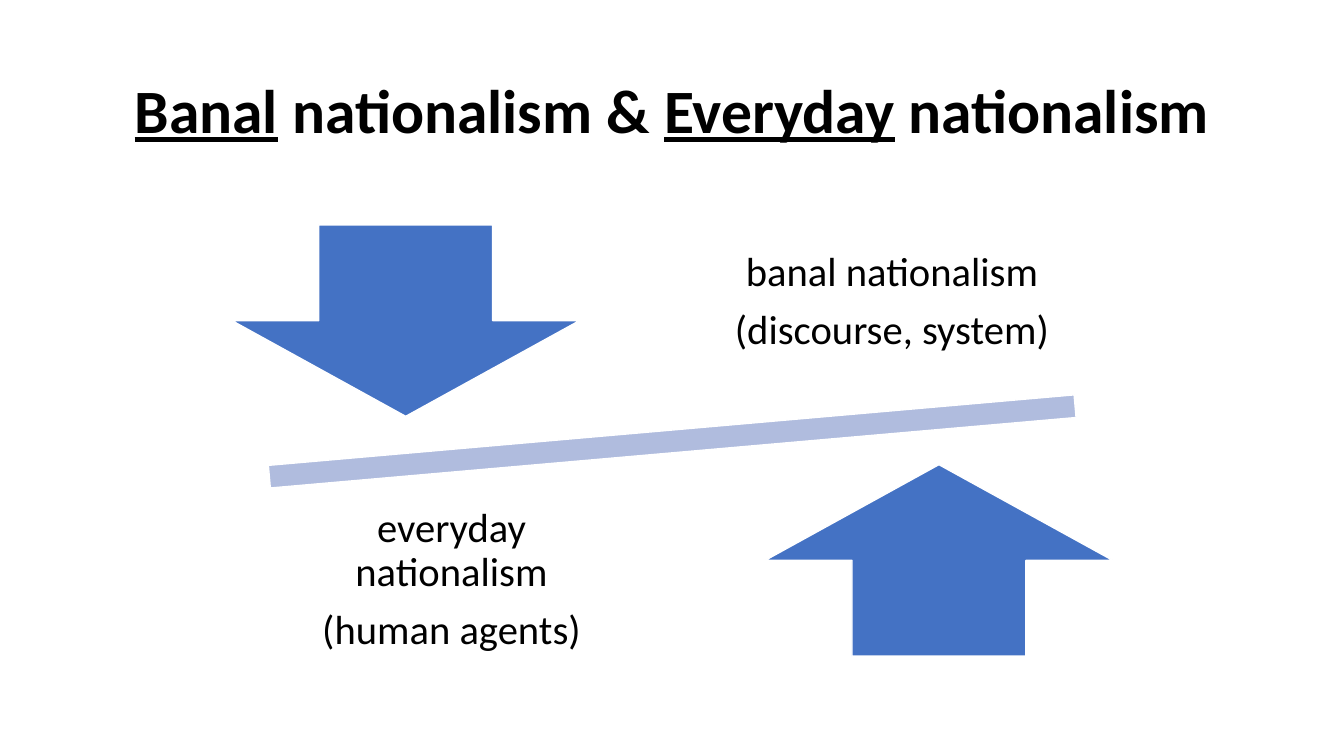
from dataclasses import dataclass

from pptx import Presentation
from pptx.dml.color import RGBColor
from pptx.enum.shapes import MSO_SHAPE
from pptx.enum.text import MSO_ANCHOR, PP_ALIGN
from pptx.util import Pt

COLORS = {"text": "000000", "arrow": "4472C4", "beam": "B0BCDE", "outline": "FFFFFF"}
FONT = "Calibri"
LABEL_SIZE = 29
ARROW_WIDTH, ARROW_HEIGHT = 248.4, 136.8
LABEL_WIDTH, LABEL_HEIGHT = 265, 144


@dataclass
class Figure:
    preset: MSO_SHAPE
    left: float
    top: float
    width: float
    height: float
    color: str
    rotation: float = 0


@dataclass
class Label:
    left: float
    top: float
    lines: list[str]


FIGURES = [
    Figure(MSO_SHAPE.MATH_MINUS, 87.1, 280.8, 786.2, 69.1, "beam", 355),
    Figure(MSO_SHAPE.DOWN_ARROW, 165.6, 160.6, ARROW_WIDTH, ARROW_HEIGHT, "arrow"),
    Figure(MSO_SHAPE.UP_ARROW, 546.5, 331.9, ARROW_WIDTH, ARROW_HEIGHT, "arrow"),
]
LABELS = [
    Label(504.7, 144, ["banal nationalism", "(discourse, system)"]),
    Label(190.1, 342.7, ["everyday nationalism", "(human agents)"]),
]
# Title spans with their underline setting
TITLE_SPANS = [
    ("Banal", True),
    (" nationalism & ", False),
    ("Everyday", True),
    (" nationalism", False),
]


def add_span(para, text: str, *, size: float, bold: bool = False,
             underline: bool = False, color: str = "text") -> None:
    span = para.add_run()
    span.text = text
    span.font.name = FONT
    span.font.size = Pt(size)
    span.font.bold = bold
    span.font.underline = underline
    span.font.color.rgb = RGBColor.from_string(COLORS[color])


def center(para) -> None:
    para.alignment = PP_ALIGN.CENTER
    para.line_spacing = 0.9


def draw_title(page) -> None:
    title = page.shapes.title
    title.left, title.top, title.width, title.height = Pt(66), Pt(28.8), Pt(828), Pt(104.4)
    title.text_frame.vertical_anchor = MSO_ANCHOR.MIDDLE
    para = title.text_frame.paragraphs[0]
    center(para)
    for text, underline in TITLE_SPANS:
        add_span(para, text, size=44, bold=True, underline=underline)


def draw_figure(page, figure: Figure) -> None:
    shape = page.shapes.add_shape(figure.preset, Pt(figure.left), Pt(figure.top),
                                  Pt(figure.width), Pt(figure.height))
    shape.rotation = figure.rotation
    shape.shadow.inherit = False
    shape.fill.solid()
    shape.fill.fore_color.rgb = RGBColor.from_string(COLORS[figure.color])
    shape.line.color.rgb = RGBColor.from_string(COLORS["outline"])
    shape.line.width = Pt(1)


def draw_label(page, label: Label) -> None:
    box = page.shapes.add_textbox(Pt(label.left), Pt(label.top),
                                  Pt(LABEL_WIDTH), Pt(LABEL_HEIGHT))
    frame = box.text_frame
    frame.word_wrap = True
    frame.vertical_anchor = MSO_ANCHOR.MIDDLE
    frame.margin_left = frame.margin_right = Pt(16.5)
    frame.margin_top = frame.margin_bottom = Pt(16.5)
    for index, line in enumerate(label.lines):
        para = frame.add_paragraph() if index else frame.paragraphs[0]
        center(para)
        para.space_after = Pt(10)
        add_span(para, line, size=LABEL_SIZE)


def main() -> None:
    deck = Presentation()
    deck.slide_width, deck.slide_height = Pt(960), Pt(540)
    page = deck.slides.add_slide(deck.slide_layouts.get_by_name("Title Only"))

    draw_title(page)
    # Balance beam with its two arrows
    for figure in FIGURES:
        draw_figure(page, figure)
    # Labels on either side of the beam
    for label in LABELS:
        draw_label(page, label)

    deck.save("out.pptx")


if __name__ == "__main__":
    main()
